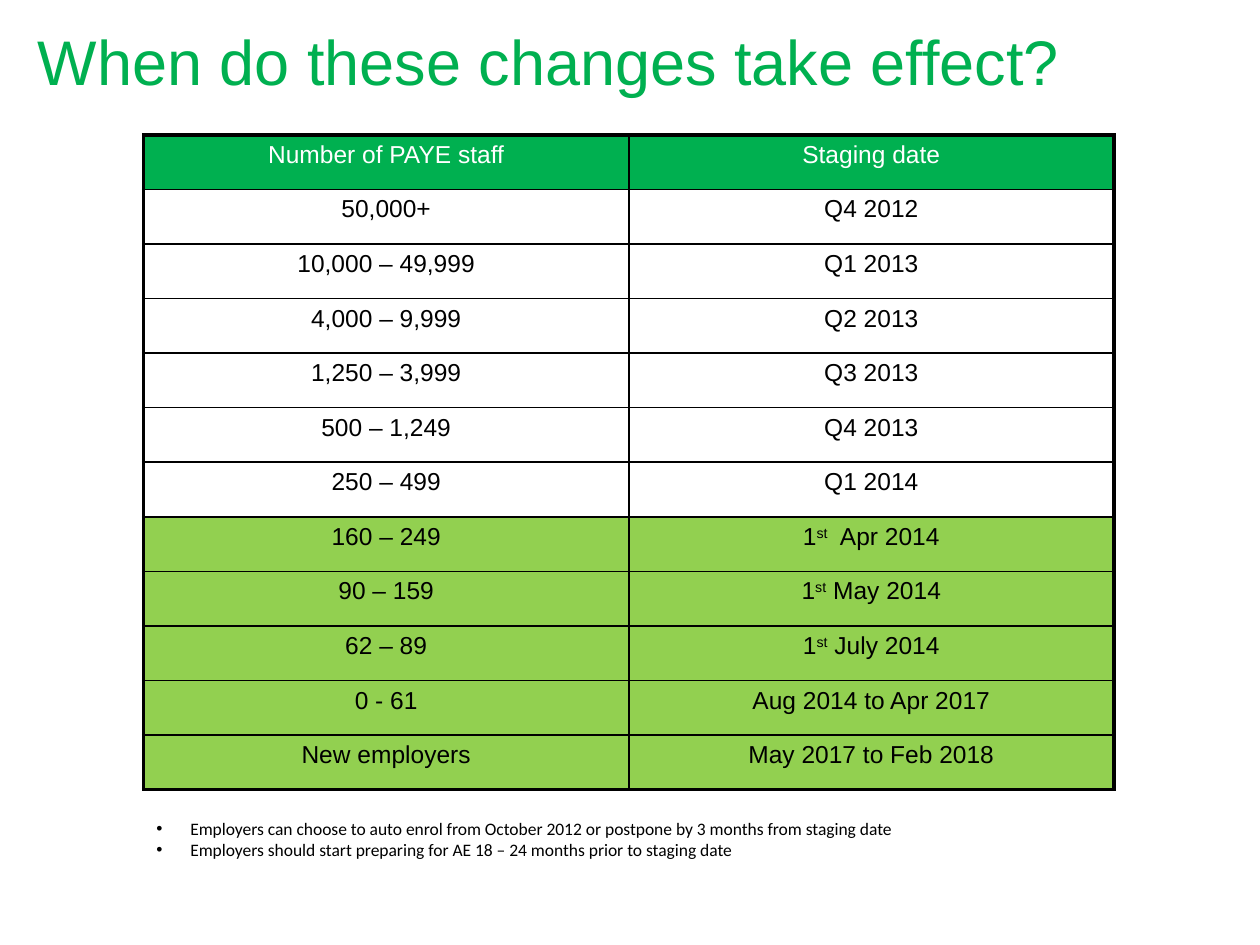
from lxml import etree
from pptx import Presentation
from pptx.dml.color import RGBColor
from pptx.enum.text import MSO_ANCHOR, MSO_AUTO_SIZE, PP_ALIGN
from pptx.oxml.ns import qn
from pptx.util import Inches, Pt

GREEN = RGBColor(0x00, 0xB0, 0x50)
LIME = RGBColor(0x92, 0xD0, 0x50)
WHITE = RGBColor(0xFF, 0xFF, 0xFF)
BLACK = RGBColor(0x00, 0x00, 0x00)
LEFT, CENTER = PP_ALIGN.LEFT, PP_ALIGN.CENTER
TOP = MSO_ANCHOR.TOP
FIT, FIXED = MSO_AUTO_SIZE.SHAPE_TO_FIT_TEXT, MSO_AUTO_SIZE.NONE
COLS, ROWS = 100, 75
THIN, THICK = 1, 2.25

HEAD = ("Number of PAYE staff", "Staging date")
PAST = [
    ("50,000+", "Q4 2012"),
    ("10,000 – 49,999", "Q1 2013"),
    ("4,000 – 9,999", "Q2 2013"),
    ("1,250 – 3,999", "Q3 2013"),
    ("500 – 1,249", "Q4 2013"),
    ("250 – 499", "Q1 2014"),
]
NEXT = [
    ("160 – 249", "1^st^  Apr 2014"),
    ("90 – 159", "1^st^ May 2014"),
    ("62 – 89", "1^st^ July 2014"),
    ("0 - 61", "Aug 2014 to Apr 2017"),
    ("New employers", "May 2017 to Feb 2018"),
]
NOTES = [
    "Employers can choose to auto enrol from October 2012 or postpone by 3 months from staging date",
    "Employers should start preparing for AE 18 – 24 months prior to staging date",
]


def write(para, text, size=14, font="Arial", color=BLACK, align=LEFT):
    """Fill a paragraph; text between carets is raised."""
    para.alignment = align
    for i, part in enumerate(text.split("^")):
        run = para.add_run()
        run.text = part
        run.font.size = Pt(size)
        run.font.name = font
        run.font.color.rgb = color
        if i % 2:
            run.font._element.set("baseline", "30000")


def space(para, share):
    """Set the space after a paragraph as a share of its line."""
    after = etree.SubElement(para._p.get_or_add_pPr(), qn("a:spcAft"))
    etree.SubElement(after, qn("a:spcPct")).set("val", str(int(share * 100000)))


def bullet(para, indent):
    props = para._p.get_or_add_pPr()
    props.set("marL", str(indent))
    props.set("indent", str(-indent))
    etree.SubElement(props, qn("a:buFont")).set("typeface", "Arial")
    etree.SubElement(props, qn("a:buChar")).set("char", "•")


def edge(cell, side, width):
    line = etree.SubElement(cell._tc.get_or_add_tcPr(), qn(f"a:ln{side}"))
    line.set("w", str(Pt(width)))
    fill = etree.SubElement(line, qn("a:solidFill"))
    etree.SubElement(fill, qn("a:srgbClr")).set("val", str(BLACK))


class Deck:
    """Holds the grid, the file and the current slide."""

    def __init__(self, width, height):
        self.prs = Presentation()
        self.prs.slide_width = Inches(width)
        self.prs.slide_height = Inches(height)
        self.col = self.prs.slide_width / COLS
        self.row = self.prs.slide_height / ROWS
        self.slide = self.prs.slides.add_slide(self.prs.slide_layouts[1])

    def area(self, x, y, w, h):
        return (int(x * self.col), int(y * self.row),
                int(w * self.col), int(h * self.row))

    def place(self, shape, box, size):
        shape.left, shape.top, shape.width, shape.height = self.area(*box)
        frame = shape.text_frame
        frame.word_wrap = True
        frame.auto_size = size
        frame.vertical_anchor = TOP
        return frame

    def title(self, text, box):
        frame = self.place(self.slide.shapes.title, box, FIXED)
        write(frame.paragraphs[0], text, size=36, color=GREEN)

    def notes(self, items, box):
        frame = self.place(self.slide.placeholders[1], box, FIT)
        for i, item in enumerate(items):
            para = frame.add_paragraph() if i else frame.paragraphs[0]
            para.space_before = Pt(0)
            bullet(para, Inches(0.27))
            write(para, item, size=10, font="Calibri")

    def table(self, rows, box):
        """Draw rows given as (texts, fill, text colour)."""
        count, wide = len(rows), len(rows[0][0])
        grid = self.slide.shapes.add_table(count, wide, *self.area(*box)).table
        grid.first_row = grid.horz_banding = False
        for r, (texts, fill, color) in enumerate(rows):
            for c, text in enumerate(texts):
                cell = grid.cell(r, c)
                outer = {"L": c == 0, "R": c == wide - 1,
                         "T": r == 0, "B": r == count - 1}
                for side, thick in outer.items():
                    edge(cell, side, THICK if thick else THIN)
                if fill is None:
                    cell.fill.background()
                else:
                    cell.fill.solid()
                    cell.fill.fore_color.rgb = fill
                para = cell.text_frame.paragraphs[0]
                space(para, 0.75)
                write(para, text, color=color, align=CENTER)


def main():
    deck = Deck(10, 7.5)
    deck.title("When do these changes take effect?", (2, 1.3, 96.9, 13.4))
    rows = [(HEAD, GREEN, WHITE)]
    rows += [(pair, None, BLACK) for pair in PAST]
    rows += [(pair, LIME, BLACK) for pair in NEXT]
    deck.table(rows, (11.4, 10.7, 77, 52))
    deck.notes(NOTES, (11.4, 64.4, 74, 4.4))
    deck.prs.save("out.pptx")


if __name__ == "__main__":
    main()
